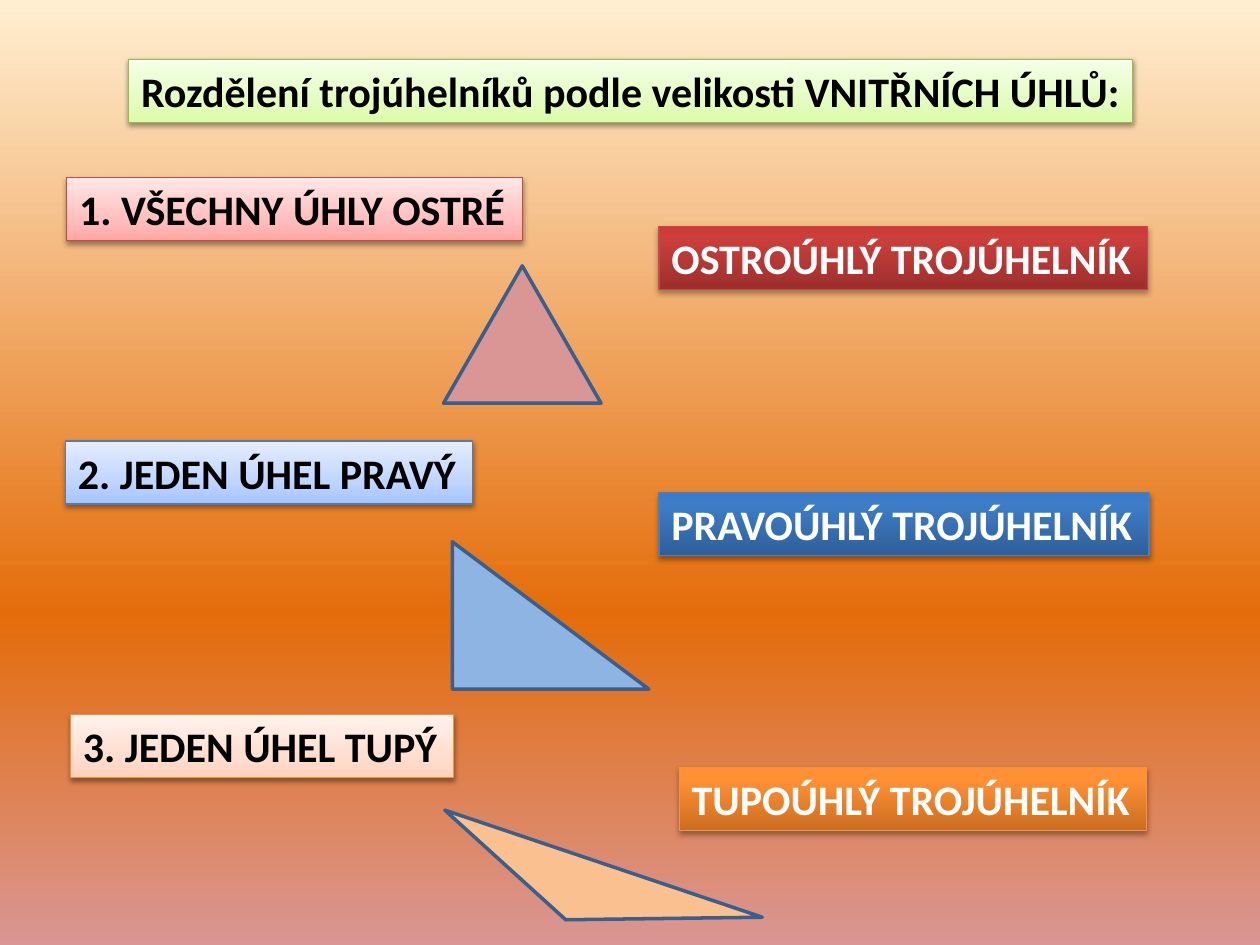
from lxml.etree import SubElement as Sub
from pptx import Presentation
from pptx.dml.color import RGBColor as RGB
from pptx.enum.shapes import MSO_SHAPE as Geo
from pptx.enum.text import MSO_ANCHOR as Anchor, MSO_AUTO_SIZE as Auto, PP_ALIGN as Align
from pptx.oxml.ns import qn
from pptx.util import Inches, Pt

HIGH = 0.5
PALE, DEEP = (0, 35, 100), (0, 80, 100)
HUES = {
    "ink": "000000", "white": "FFFFFF", "edge": "3A5F8C",
    "green": "98B955", "red": "BF4C48", "blue": "4B7EBC", "orange": "F69240",
    "rose": "D99694", "sky": "8EB4E3", "peach": "FAC090",
}
FADES = {
    "back": "FFEFD1 E46C0A D99694",
    "pale green": "DAFDA7 E4FCC2 F5FFE7",
    "pale red": "FFA6A5 FFC0BF FFE7E7",
    "pale blue": "A4C4FF BFD4FF E6EEFF",
    "pale orange": "FFD2BD FFDED0 FFF2ED",
    "deep red": "9C2F2D CB3E3A CE3B37",
    "deep blue": "2F5F99 3D7CC7 3A7CCB",
    "deep orange": "CC6E20 FF9034 FF9136",
}


def color(name):
    return RGB.from_string(HUES[name])


def fade(owner, fill, name, spots, angle):
    """Fill with a linear gradient of three stops."""
    fill.gradient()
    fill.gradient_angle = angle
    stops = owner.find(".//" + qn("a:gsLst"))
    for old in list(stops):
        stops.remove(old)
    for spot, tone in zip(spots, FADES[name].split()):
        stop = Sub(stops, qn("a:gs"), pos=str(spot * 1000))
        Sub(stop, qn("a:srgbClr"), val=tone)


def shade(shape, drop, alpha):
    """Cast a soft shadow straight down."""
    shape.shadow.inherit = False
    group = shape.element.spPr.find(qn("a:effectLst"))
    cast = Sub(group, qn("a:outerShdw"), blurRad=str(Pt(3.1)), dist=str(Pt(drop)),
               dir="5400000", rotWithShape="0")
    tone = Sub(cast, qn("a:srgbClr"), val=HUES["ink"])
    Sub(tone, qn("a:alpha"), val=str(alpha * 1000))


def write(shape, text, size=24, bold=True, hue="ink", font="Calibri",
          fit=Auto.SHAPE_TO_FIT_TEXT):
    frame = shape.text_frame
    frame.word_wrap = False
    frame.auto_size = fit
    frame.vertical_anchor = Anchor.TOP
    para = frame.paragraphs[0]
    para.alignment = Align.LEFT
    run = para.add_run()
    run.text = text
    run.font.size, run.font.bold, run.font.name = Pt(size), bold, font
    run.font.color.rgb = color(hue)


def label(shape, text, hue, deep=False, **form):
    """Turn a shape into a shaded, bordered label."""
    tint = "deep " if deep else "pale "
    fade(shape.element, shape.fill, tint + hue, DEEP if deep else PALE, 90)
    shape.line.color.rgb = color(hue)
    shape.line.width = Pt(0.75)
    shade(shape, *((1.8, 35) if deep else (1.6, 38)))
    write(shape, text, hue="white" if deep else "ink", **form)


def box(slide, left, top, width):
    return slide.shapes.add_shape(
        Geo.RECTANGLE, *map(Inches, (left, top, width, HIGH)))


def paint(shape, hue):
    shape.shadow.inherit = False
    shape.fill.solid()
    shape.fill.fore_color.rgb = color(hue)
    shape.line.color.rgb = color("edge")
    shape.line.width = Pt(2)


def figure(slide, geo, hue, *place):
    paint(slide.shapes.add_shape(geo, *map(Inches, place)), hue)


def outline(slide, hue, *spots):
    """Draw a closed outline through points given in inches."""
    start, *rest = [(Inches(x), Inches(y)) for x, y in spots]
    pen = slide.shapes.build_freeform(*start)
    pen.add_line_segments(rest, close=True)
    paint(pen.convert_to_shape(), hue)


def main():
    deck = Presentation()
    deck.slide_width, deck.slide_height = Inches(10), Inches(7.5)
    slide = deck.slides.add_slide(deck.slide_layouts[5])
    fade(slide.element, slide.background.fill, "back", (0, 65, 100), 270)

    title = slide.shapes.title
    title.left, title.top = Inches(1.02), Inches(0.47)
    title.width, title.height = Inches(7.97), Inches(HIGH)
    label(title, "Rozdělení trojúhelníků podle velikosti VNITŘNÍCH ÚHLŮ:", "green",
          fit=Auto.NONE)

    rules = [
        ("1. VŠECHNY ÚHLY OSTRÉ", "red", 0.53, 1.41, 3.62),
        ("2. JEDEN ÚHEL PRAVÝ", "blue", 0.52, 3.5, 3.23),
        ("3. JEDEN ÚHEL TUPÝ", "orange", 0.56, 5.67, 3.04),
    ]
    kinds = [
        ("OSTROÚHLÝ TROJÚHELNÍK", "red", 5.23, 1.8, 3.88),
        ("PRAVOÚHLÝ TROJÚHELNÍK", "blue", 5.23, 3.91, 3.89),
        ("TUPOÚHLÝ TROJÚHELNÍK", "orange", 5.39, 6.09, 3.71),
    ]
    for deep, group in ((False, rules), (True, kinds)):
        for text, hue, *place in group:
            label(box(slide, *place), text, hue, deep)

    figure(slide, Geo.ISOSCELES_TRIANGLE, "rose", 3.52, 2.11, 1.25, 1.09)
    figure(slide, Geo.RIGHT_TRIANGLE, "sky", 3.59, 4.3, 1.56, 1.17)
    outline(slide, "peach", (3.53, 6.43), (4.49, 7.3), (6.05, 7.28))
    deck.save("out.pptx")


if __name__ == "__main__":
    main()
